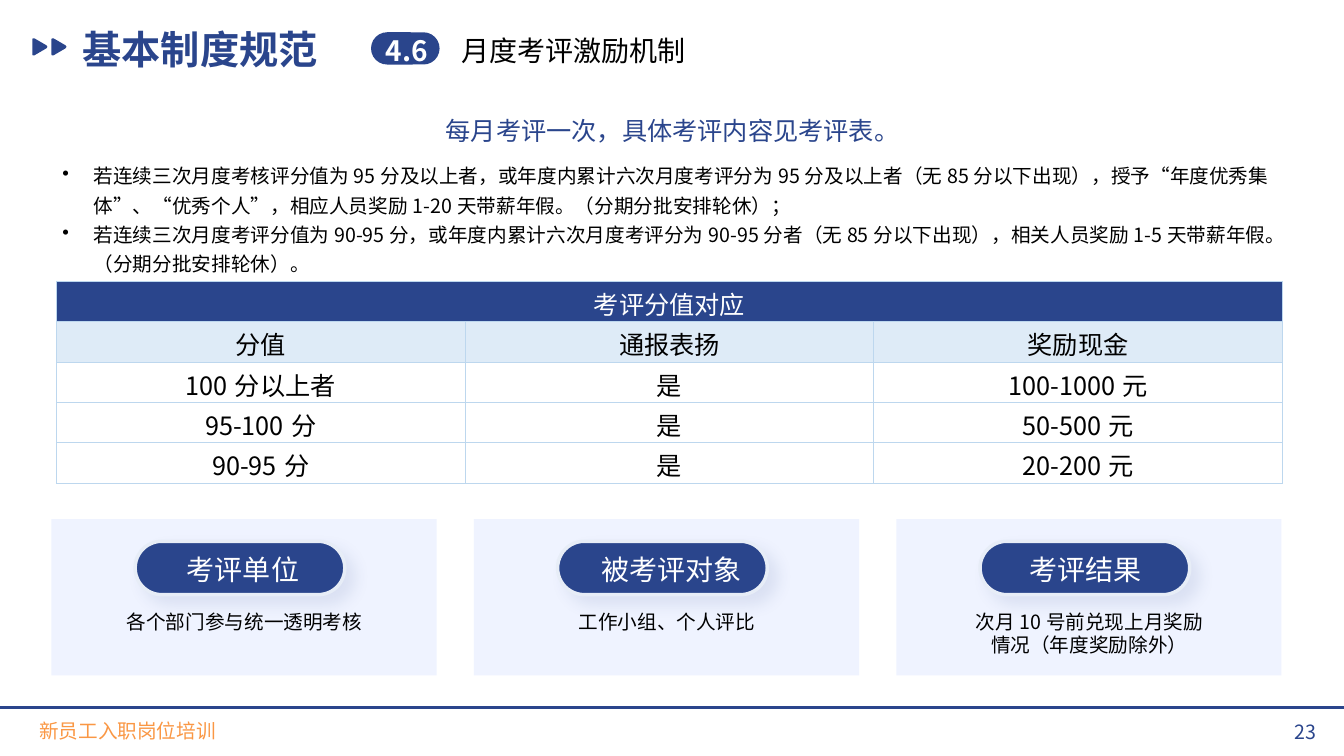
import pptx
import pptx.util
import pptx.dml.color
import pptx.enum.shapes
import pptx.enum.text
import pptx.oxml
import pptx.oxml.ns
from lxml import etree

Inches, Pt = pptx.util.Inches, pptx.util.Pt
SHAPE = pptx.enum.shapes.MSO_SHAPE
ALIGN = pptx.enum.text.PP_ALIGN
ANCHOR = pptx.enum.text.MSO_ANCHOR
qn = pptx.oxml.ns.qn

FONT = "Noto Sans CJK SC"
COLORS = {"navy": "2A458C", "orange": "FA9744", "black": "000000", "white": "FFFFFF",
          "card": "EFF3FF", "rim": "E7EDF7", "subhead": "DEEBF7", "grid": "BDD7EE"}
WIDTH, HEIGHT = 13.33, 7.5

RULES = [
    "若连续三次月度考核评分值为95分及以上者，或年度内累计六次月度考评分为95分及以上者（无85分以下出现），"
    "授予“年度优秀集体”、“优秀个人”，相应人员奖励1-20天带薪年假。（分期分批安排轮休）；",
    "若连续三次月度考评分值为90-95分，或年度内累计六次月度考评分为90-95分者（无85分以下出现），"
    "相关人员奖励1-5天带薪年假。（分期分批安排轮休）。",
]
SCORES = [
    ["考评分值对应", "", ""],
    ["分值", "通报表扬", "奖励现金"],
    ["100分以上者", "是", "100-1000元"],
    ["95-100分", "是", "50-500元"],
    ["90-95分", "是", "20-200元"],
]
# Heading, distance of its centre from the card's left edge, detail
CARDS = [
    ("考评单位", 1.9, "各个部门参与统一透明考核"),
    ("被考评对象", 1.96, "工作小组、个人评比"),
    ("考评结果", 1.88, "次月10号前兑现上月奖励情况（年度奖励除外）"),
]


def rgb(name):
    return pptx.dml.color.RGBColor.from_string(COLORS[name])


def lengths(*values):
    return [Inches(value) for value in values]


def style(para, size, color, bold=False, align=ALIGN.LEFT):
    para.alignment = align
    font = para.font
    font.name, font.size, font.bold = FONT, Pt(size), bold
    font.color.rgb = rgb(color)
    defaults = para._p.pPr.find(qn("a:defRPr"))
    etree.SubElement(defaults, qn("a:ea"), typeface=FONT)


def add_text(page, box, text, size, color, **options):
    frame = page.shapes.add_textbox(*lengths(*box)).text_frame
    frame.word_wrap = True
    frame.text = text
    for para in frame.paragraphs:
        style(para, size, color, **options)
    return frame


def add_block(page, kind, box, color):
    block = page.shapes.add_shape(kind, *lengths(*box))
    block.shadow.inherit = False
    block.fill.solid()
    block.fill.fore_color.rgb = rgb(color)
    block.line.fill.background()
    return block


def add_pill(page, box, color):
    pill = add_block(page, SHAPE.ROUNDED_RECTANGLE, box, color)
    pill.adjustments[0] = 0.5
    return pill


def add_arrow(page, left, top):
    """Right-pointing triangle with softened corners."""
    points = [(2, 0), (14, 7), (15, 8.5), (14, 10), (2, 17), (0.5, 17), (0, 16), (0, 1), (0.5, 0)]
    spots = [lengths(left + x / 100, top + y / 100) for x, y in points]
    builder = page.shapes.build_freeform(*spots[0])
    builder.add_line_segments(spots[1:])
    arrow = builder.convert_to_shape()
    arrow.shadow.inherit = False
    arrow.fill.solid()
    arrow.fill.fore_color.rgb = rgb("navy")
    arrow.line.fill.background()


def add_header(page, left, top):
    for step in range(2):
        add_arrow(page, left + 0.19 * step, top + 0.18)
    title = page.shapes.title
    title.left, title.top, title.width, title.height = lengths(left + 0.4, top, 3.5, 0.57)
    frame = title.text_frame
    frame.text = "基本制度规范"
    frame.vertical_anchor = ANCHOR.TOP
    frame.auto_size = pptx.enum.text.MSO_AUTO_SIZE.NONE
    style(frame.paragraphs[0], 28, "navy", bold=True)

    add_text(page, (left + 4.16, top + 0.08, 2.96, 0.44), "月度考评激励机制", 20, "black")
    add_pill(page, (left + 3.36, top + 0.12, 0.68, 0.32), "navy")
    add_text(page, (left + 3.41, top + 0.08, 0.75, 0.44), "4.6", 20, "white", bold=True)


def add_rules(page, box):
    frame = add_text(page, box, "\n".join(RULES), 14, "black")
    for para in frame.paragraphs:
        para.line_spacing = 1.25
        props = para._p.pPr
        props.set("marL", str(Inches(0.31)))
        props.set("indent", str(-Inches(0.31)))
        bullet = etree.Element(qn("a:buChar"), char="•")
        props.find(qn("a:defRPr")).addprevious(bullet)


def add_borders(cell):
    props = cell._tc.get_or_add_tcPr()
    for place, side in enumerate(("lnL", "lnR", "lnT", "lnB")):
        border = etree.Element(qn("a:" + side), w=str(Pt(0.5)))
        fill = etree.SubElement(border, qn("a:solidFill"))
        etree.SubElement(fill, qn("a:srgbClr"), val=COLORS["grid"])
        props.insert(place, border)


def add_scores(page, box):
    rows, columns = len(SCORES), len(SCORES[0])
    table = page.shapes.add_table(rows, columns, *lengths(*box)).table
    fills = ["navy", "subhead"] + ["white"] * (rows - 2)
    for row, (values, fill) in enumerate(zip(SCORES, fills)):
        for column, value in enumerate(values):
            cell = table.cell(row, column)
            cell.text = value
            cell.vertical_anchor = ANCHOR.MIDDLE
            cell.margin_top, cell.margin_bottom = Inches(0.04), 0
            cell.fill.solid()
            cell.fill.fore_color.rgb = rgb(fill)
            style(cell.text_frame.paragraphs[0], 18, "black" if row else "white", align=ALIGN.CENTER)
            add_borders(cell)
    table.cell(0, 0).merge(table.cell(0, columns - 1))


def add_soft_shadow(shape):
    effects = shape._element.spPr.find(qn("a:effectLst"))
    shadow = etree.SubElement(effects, qn("a:outerShdw"), blurRad=str(Pt(11)), dist=str(Pt(9)),
                              dir=str(45 * 60000), algn="tl", rotWithShape="0")
    color = etree.SubElement(shadow, qn("a:srgbClr"), val=COLORS["navy"])
    etree.SubElement(color, qn("a:alpha"), val="9000")


def add_card(page, box, heading, centre, detail):
    left, top = box[:2]
    add_block(page, SHAPE.RECTANGLE, box, "card")
    pill = add_pill(page, (left + 0.83, top + 0.22, 2.08, 0.53), "navy")
    pill.line.color.rgb = rgb("rim")
    pill.line.width = Pt(2.5)
    add_soft_shadow(pill)
    add_text(page, (left + 0.64, top + 0.85, 2.55, 0.57), detail, 14, "black", align=ALIGN.CENTER)
    add_text(page, (left + centre - 0.86, top + 0.28, 1.72, 0.44), heading, 20, "white",
             align=ALIGN.CENTER)


def add_cards(page, left, top, width, height, gap):
    for column, card in enumerate(CARDS):
        add_card(page, (left + column * (width + gap), top, width, height), *card)


def add_footer(page, top):
    rule = page.shapes.add_connector(pptx.enum.shapes.MSO_CONNECTOR.STRAIGHT,
                                     *lengths(0, top, WIDTH, top))
    rule.line.color.rgb = rgb("navy")
    rule.line.width = Pt(2.5)
    etree.SubElement(rule._element.spPr, qn("a:effectLst"))
    add_text(page, (0.29, top + 0.06, 2.09, 0.34), "新员工入职岗位培训", 14, "orange")
    add_text(page, (12.68, top + 0.07, 0.53, 0.4), "23", 14, "navy", align=ALIGN.CENTER)


def main():
    deck = pptx.Presentation()
    deck.slide_width, deck.slide_height = lengths(WIDTH, HEIGHT)
    page = deck.slides.add_slide(deck.slide_layouts[5])
    add_footer(page, 7.02)
    add_header(page, 0.32, 0.2)
    add_text(page, (3.12, 1.09, 7.1, 0.4), "每月考评一次，具体考评内容见考评表。", 18, "navy",
             align=ALIGN.CENTER)
    add_cards(page, 0.51, 5.15, 3.82, 1.55, gap=0.37)
    add_scores(page, (0.56, 2.79, 12.16, 2))
    add_rules(page, (0.52, 1.52, 12.39, 1.28))
    deck.save("out.pptx")


if __name__ == "__main__":
    main()
